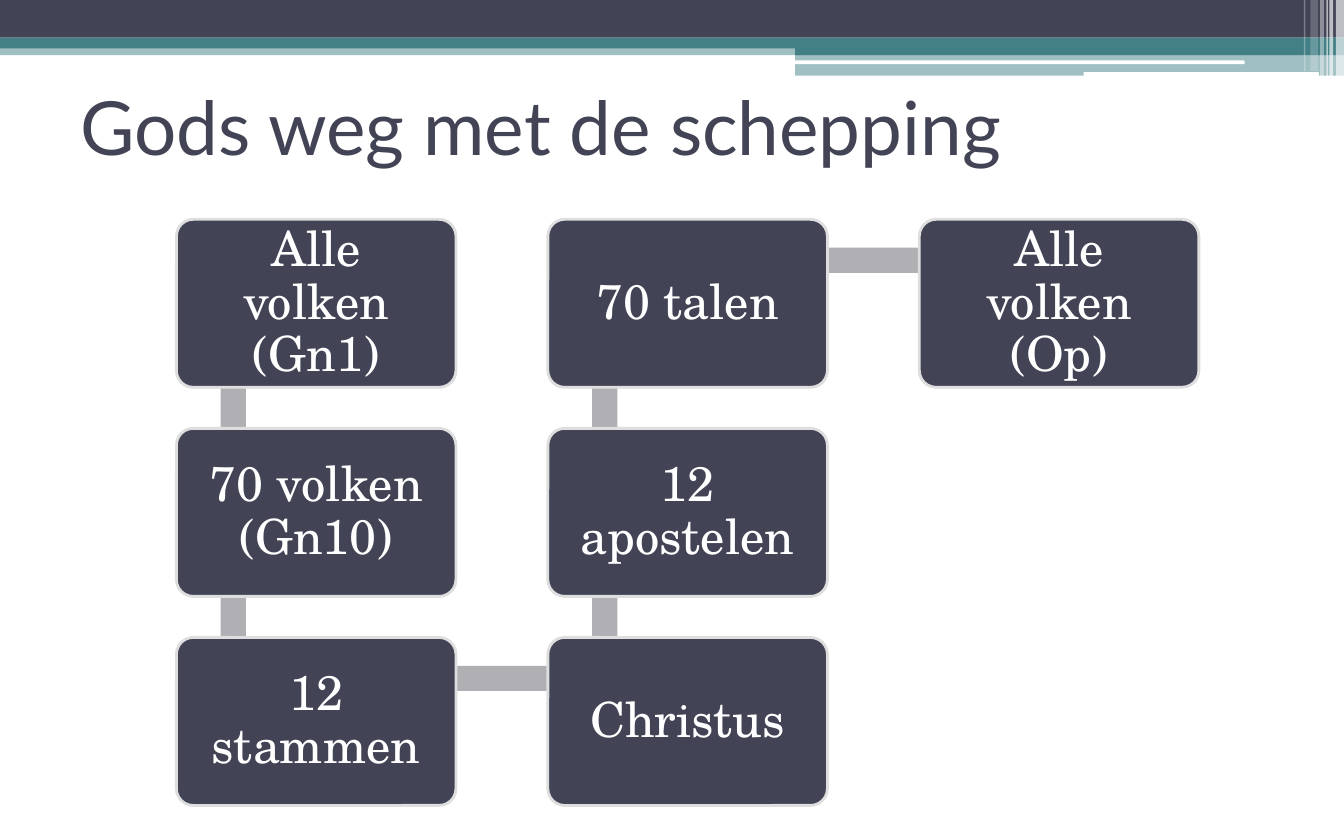
from itertools import pairwise

from lxml import etree
from pptx import Presentation
from pptx.dml.color import RGBColor
from pptx.enum.shapes import MSO_SHAPE as SHAPE
from pptx.enum.text import MSO_ANCHOR as ANCHOR, PP_ALIGN as ALIGN
from pptx.oxml.ns import qn
from pptx.util import Pt

COLORS = {"dark": "424456", "teal": "438086", "white": "FFFFFF",
          "bar": "B0B0B4", "edge": "DEDEDE"}
WIDTH, HEIGHT = 720, 450

# Header: left, top, width, height, colour, opacity in percent
BANDS = [
    (0, 23.76, WIDTH, 5.76, "teal", 50),
    (0, 0, WIDTH, 20.16, "dark", 100),
    (0, 20.16, WIDTH, 5.76, "teal", 100),
    (426, 23.76, 294, 5.76, "teal", 100),
    (426, 29.2, 294, 11.3, "teal", 50),
]
SLITS = [(425.5, 32.4, 241.2, 2), (580.5, 38.7, 126, 2)]
# Vertical stripes: left, width, height, opacity in percent
STRIPES = [
    (715.6, 4.4, 40.8, 65), (712.2, 2, 40.8, 65), (710.6, 0.8, 40.8, 60),
    (707.2, 2, 40.8, 40), (702, 4.2, 38.2, 20), (698.6, 0.8, 38.2, 30),
]

# Steps in reading order: column, row, text
STEPS = [
    (0, 0, "Alle volken (Gn1)"), (0, 1, "70 volken (Gn10)"),
    (0, 2, "12 stammen"), (1, 2, "Christus"), (1, 1, "12 apostelen"),
    (1, 0, "70 talen"), (2, 0, "Alle volken (Op)"),
]
GRID_X, GRID_Y, PITCH_X, PITCH_Y = 94.5, 117.5, 199, 112
BOX_W, BOX_H = 149.75, 90
BAR_X, BAR_Y, BAR_SIZE = 30.5, 22, 13.5


class Deck:
    def __init__(self):
        self.prs = Presentation()
        self.prs.slide_width, self.prs.slide_height = Pt(WIDTH), Pt(HEIGHT)
        self.slide = self.prs.slides.add_slide(self.prs.slide_layouts[6])

    def shape(self, x, y, w, h, color, opacity=100, kind=SHAPE.RECTANGLE):
        sp = self.slide.shapes.add_shape(kind, Pt(x), Pt(y), Pt(w), Pt(h))
        sp.shadow.inherit = False
        sp.fill.solid()
        sp.fill.fore_color.rgb = RGBColor.from_string(COLORS[color])
        sp.line.fill.background()
        if opacity < 100:
            clr = sp.element.spPr.find(".//" + qn("a:srgbClr"))
            etree.SubElement(clr, qn("a:alpha"), val=str(opacity * 1000))
        return sp

    def add_text(self, sp, text, size, font, color, align):
        tf = sp.text_frame
        tf.word_wrap = True
        tf.vertical_anchor = ANCHOR.MIDDLE
        p = tf.paragraphs[0]
        p.alignment = align
        r = p.add_run()
        r.text = text
        r.font.size, r.font.name = Pt(size), font
        r.font.color.rgb = RGBColor.from_string(COLORS[color])
        return tf

    def title(self, text):
        sp = self.slide.shapes.add_textbox(Pt(36), Pt(32.4), Pt(648), Pt(70))
        self.add_text(sp, text, 40, "Lato", "dark", ALIGN.LEFT)

    def bar(self, start, end):
        """Join the anchor points of two steps with a flat bar."""
        (x1, x2), (y1, y2) = (sorted(pair) for pair in zip(start, end))
        if x1 == x2:
            x1, x2 = x1 - BAR_SIZE / 2, x1 + BAR_SIZE / 2
        else:
            y1, y2 = y1 - BAR_SIZE / 2, y1 + BAR_SIZE / 2
        self.shape(x1, y1, x2 - x1, y2 - y1, "bar")

    def step(self, x, y, text):
        sp = self.shape(x, y, BOX_W, BOX_H, "dark", kind=SHAPE.ROUNDED_RECTANGLE)
        sp.adjustments[0] = 0.1
        sp.line.color.rgb = RGBColor.from_string(COLORS["edge"])
        sp.line.width = Pt(1.5)
        tf = self.add_text(sp, text, 26, "TeX Gyre Schola", "white", ALIGN.CENTER)
        tf.margin_left = tf.margin_right = Pt(8)
        tf.margin_top = tf.margin_bottom = Pt(8)
        tf.paragraphs[0].line_spacing = 0.9


def main():
    deck = Deck()
    for band in BANDS:
        deck.shape(*band)
    for slit in SLITS:
        deck.shape(*slit, "white", kind=SHAPE.ROUNDED_RECTANGLE)
    for x, w, h, opacity in STRIPES:
        deck.shape(x, 0, w, h, "white", opacity)

    steps = [(GRID_X + col * PITCH_X, GRID_Y + row * PITCH_Y, text)
             for col, row, text in STEPS]
    anchors = [(x + BAR_X, y + BAR_Y) for x, y, _ in steps]
    for start, end in pairwise(anchors):
        deck.bar(start, end)
    for step in steps:
        deck.step(*step)

    deck.title("Gods weg met de schepping")
    deck.prs.save("out.pptx")


if __name__ == "__main__":
    main()
